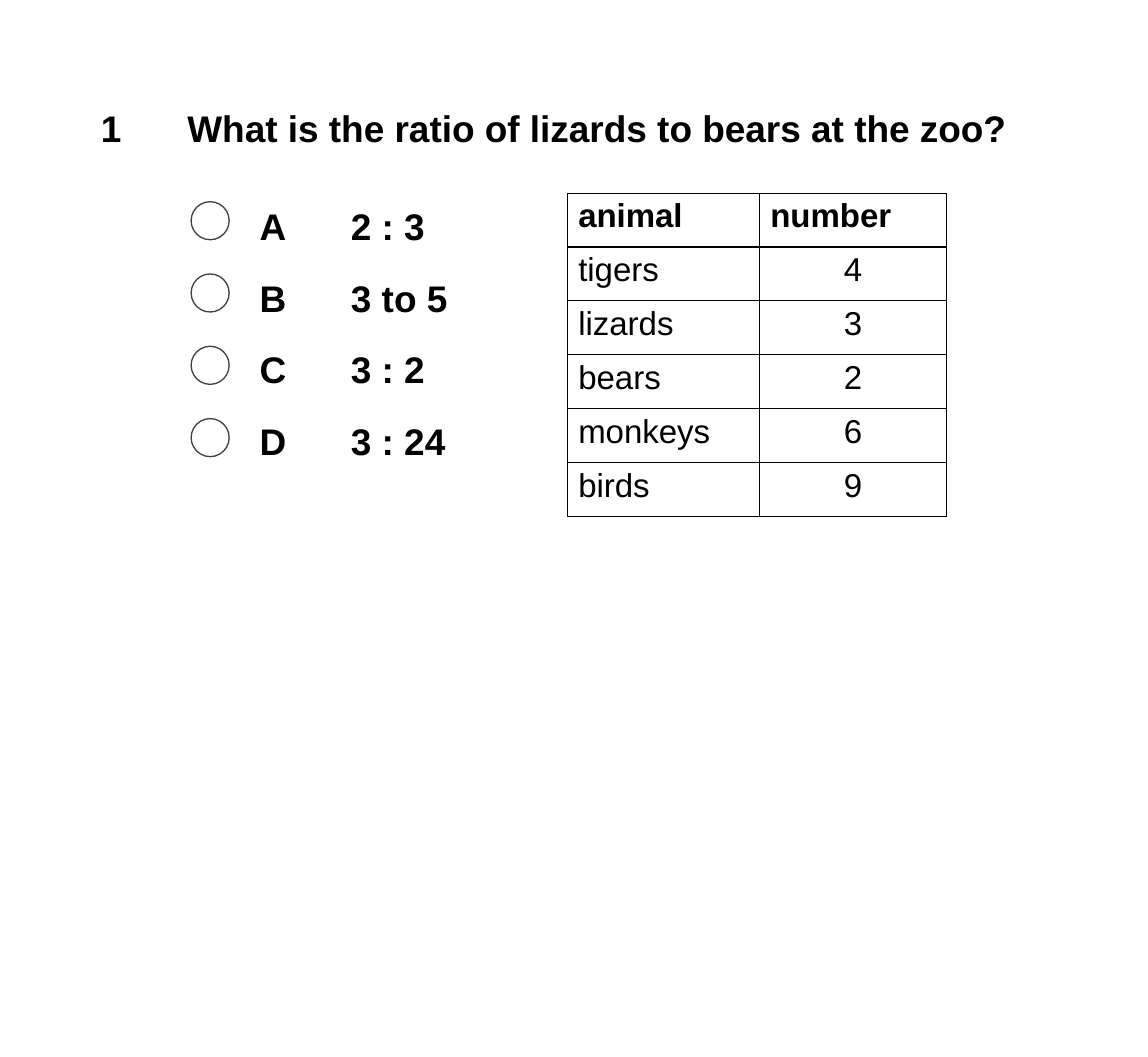
import pptx
import pptx.util
import pptx.dml.color
import pptx.enum.shapes
import pptx.enum.text
import pptx.oxml
import pptx.oxml.ns
import lxml.etree

Inches = pptx.util.Inches
Align = pptx.enum.text.PP_ALIGN


def colour(value):
    return pptx.dml.color.RGBColor.from_string(value)


def write(frame, text, size, bold=True, align=Align.LEFT):
    frame.margin_left = frame.margin_right = Inches(0.11)
    frame.margin_top = frame.margin_bottom = Inches(0.05)
    para = frame.paragraphs[0]
    para.alignment = align
    span = para.add_run()
    span.text = text
    span.font.name = "Arial"
    span.font.size = pptx.util.Pt(size)
    span.font.bold = bold
    span.font.color.rgb = colour("000000")


deck = pptx.Presentation()
deck.slide_width = Inches(12.07)
deck.slide_height = Inches(11.11)
page = deck.slides.add_slide(deck.slide_layouts[5])

title = page.shapes.title
title.left, title.top = Inches(1.86), Inches(1.06)
title.width, title.height = Inches(9.43), Inches(0.58)
title.text_frame.word_wrap = True
title.text_frame.auto_size = pptx.enum.text.MSO_AUTO_SIZE.NONE
title.text_frame.vertical_anchor = pptx.enum.text.MSO_ANCHOR.TOP
write(title.text_frame, "What is the ratio of lizards to bears at the zoo?", 28)

labels = [("1", 0.95, 1.06, 0.58)]
answers = [("A", "2 : 3", 2.09), ("B", "3 to 5", 2.85), ("C", "3 : 2", 3.59), ("D", "3 : 24", 4.35)]
for letter, answer, top in answers:
    labels += [(letter, 2.62, top, 0.9), (answer, 3.58, top, 2)]

for text, left, top, width in labels:
    box = page.shapes.add_textbox(Inches(left), Inches(top), Inches(width), Inches(0.58))
    box.text_frame.word_wrap = True
    write(box.text_frame, text, 28)

animals = [("animal", "number"), ("tigers", "4"), ("lizards", "3"),
           ("bears", "2"), ("monkeys", "6"), ("birds", "9")]
table = page.shapes.add_table(len(animals), 2, Inches(5.97), Inches(2.03), Inches(3.98), Inches(3.4)).table
table.horz_banding = False
table.columns[0].width = Inches(2.02)
table.columns[1].width = Inches(1.96)
for row, values in enumerate(animals):
    for column, value in enumerate(values):
        cell = table.cell(row, column)
        header = row == 0
        centred = column == 1 and not header
        write(cell.text_frame, value, 25, header, Align.CENTER if centred else Align.LEFT)
        cell.margin_left = cell.margin_right = Inches(0.11)
        cell.margin_top = cell.margin_bottom = Inches(0.05)
        properties = cell._tc.get_or_add_tcPr()
        for side in ("a:lnL", "a:lnR", "a:lnT", "a:lnB"):
            border = lxml.etree.SubElement(properties, pptx.oxml.ns.qn(side), w="12700")
            fill = lxml.etree.SubElement(border, pptx.oxml.ns.qn("a:solidFill"))
            lxml.etree.SubElement(fill, pptx.oxml.ns.qn("a:srgbClr"), val="000000")
        cell.fill.solid()
        cell.fill.fore_color.rgb = colour("FFFFFF")

for index in range(len(answers)):
    circle = page.shapes.add_shape(
        pptx.enum.shapes.MSO_SHAPE.OVAL,
        Inches(2.01), Inches(2.12 + 0.76 * index), Inches(0.4), Inches(0.4))
    circle.shadow.inherit = False
    circle.fill.solid()
    circle.fill.fore_color.rgb = colour("FFFFFF")
    circle.line.color.rgb = colour("404040")
    circle.line.width = pptx.util.Pt(1)

deck.save("out.pptx")
